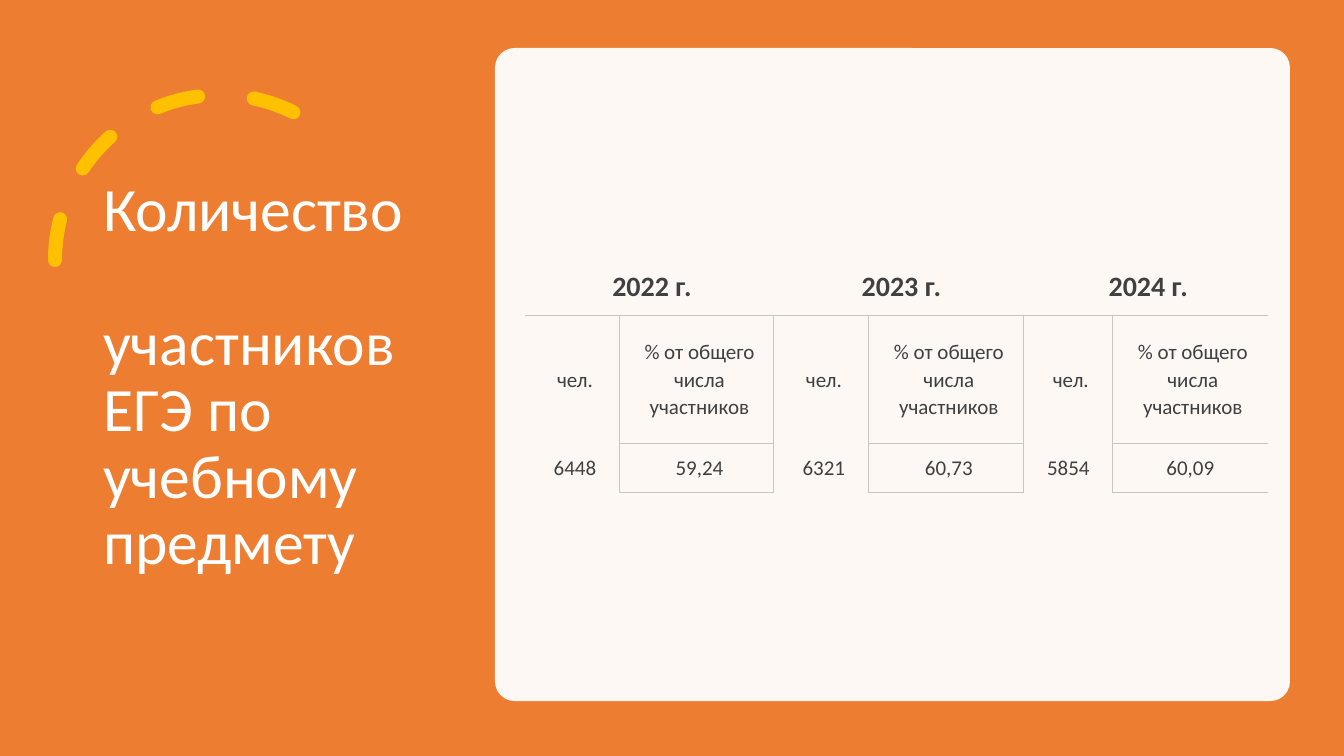
from dataclasses import dataclass

import pptx
import pptx.dml.color
import pptx.enum.dml
import pptx.enum.shapes
import pptx.enum.text
import pptx.oxml.ns
import pptx.util
from lxml import etree


@dataclass(frozen=True)
class Theme:
    orange: str = "ED7D31"
    yellow: str = "FFC000"
    white: str = "FFFFFF"
    ink: str = "404040"
    rule: str = "C7C6C1"
    font: str = "Calibri"
    title: int = 44
    year: int = 20
    body: int = 15


theme = Theme()
px = 914400 / 100.8
qn = pptx.oxml.ns.qn
rgb = pptx.dml.color.RGBColor.from_string
SHAPE = pptx.enum.shapes.MSO_SHAPE
ALIGN = pptx.enum.text.PP_ALIGN
ANCHOR = pptx.enum.text.MSO_ANCHOR


def emu(*lengths):
    return [pptx.util.Emu(round(n * px)) for n in lengths]


def write(p, text, size, color, bold=False, align=ALIGN.LEFT, spacing=1.0):
    p.alignment = align
    p.line_spacing = spacing
    r = p.add_run()
    r.text = text
    r.font.name = theme.font
    r.font.size = pptx.util.Pt(size)
    r.font.bold = bold
    r.font.color.rgb = rgb(color)


prs = pptx.Presentation()
prs.slide_width, prs.slide_height = emu(1344, 756)
slide = prs.slides.add_slide(prs.slide_layouts[5])
shapes = slide.shapes

# Background, dashed arc and card
backdrop = shapes.add_shape(SHAPE.RECTANGLE, *emu(0, 0, 1344, 756))
arc = shapes.add_shape(SHAPE.ARC, *emu(55, 95, 330, 330))
card = shapes.add_shape(SHAPE.ROUNDED_RECTANGLE, *emu(495, 48, 795, 653))

for s, color in ((backdrop, theme.orange), (card, theme.white)):
    s.shadow.inherit = False
    s.fill.solid()
    s.fill.fore_color.rgb = rgb(color)
    s.line.fill.background()
card.adjustments[0] = 0.03
card_color = card._element.spPr.find(qn("a:solidFill"))[0]
etree.SubElement(card_color, qn("a:alpha"), val="95000")

arc.shadow.inherit = False
arc.fill.background()
arc.adjustments[0] = 146.13
arc.adjustments[1] = 0
arc.line.color.rgb = rgb(theme.yellow)
arc.line.width = pptx.util.Pt(10)
arc.line.dash_style = pptx.enum.dml.MSO_LINE.DASH
arc.line._ln.set("cap", "rnd")
arc._element.spPr.find(qn("a:xfrm")).set("flipH", "1")

# Title, stacked above the background
title = shapes.title
title.left, title.top, title.width, title.height = emu(93, 71, 326, 614)
card._element.addprevious(title._element)
tf = title.text_frame
tf.word_wrap = True
tf.auto_size = pptx.enum.text.MSO_AUTO_SIZE.NONE
tf.vertical_anchor = ANCHOR.MIDDLE
write(tf.paragraphs[0], "Количество", theme.title, theme.white, spacing=0.9)
p = tf.add_paragraph()
p.space_before = pptx.util.Pt(48)
write(p, "участников ЕГЭ по учебному предмету", theme.title, theme.white, spacing=0.9)

# Table: two columns for each year
results = [("2022 г.", "6448", "59,24"), ("2023 г.", "6321", "60,73"),
           ("2024 г.", "5854", "60,09")]
col_widths = [95, 154, 95, 155, 89, 155]
row_heights = [59, 128, 49]
rows = [[], [], []]
for year, count, share in results:
    rows[0] += [year, ""]
    rows[1] += ["чел.", "% от общего числа участников"]
    rows[2] += [count, share]

frame = shapes.add_table(3, 6, *emu(525, 256, sum(col_widths), sum(row_heights)))
table = frame.table
table.first_row = table.horz_banding = False
for column, width in zip(table.columns, emu(*col_widths)):
    column.width = width
for row, height in zip(table.rows, emu(*row_heights)):
    row.height = height
for c in (0, 2, 4):
    table.cell(0, c).merge(table.cell(0, c + 1))

for i, texts in enumerate(rows):
    for j, text in enumerate(texts):
        cell = table.cell(i, j)
        tight = i == 2 and j >= 4
        insets = emu(*((5, 0, 5, 0) if tight else (22, 11, 17, 11)))
        cell.margin_left, cell.margin_top, cell.margin_right, cell.margin_bottom = insets
        cell.vertical_anchor = ANCHOR.MIDDLE if i else ANCHOR.TOP
        if text:
            write(cell.text_frame.paragraphs[0], text,
                  theme.body if i else theme.year, theme.ink,
                  bold=i == 0, align=ALIGN.CENTER, spacing=1.07)
        share_column = j % 2 == 1
        edges = {"L": i > 0 and j > 0, "R": i > 0 and j < 5,
                 "T": i == 1 or (i == 2 and share_column),
                 "B": i == 0 or share_column}
        tcPr = cell._tc.get_or_add_tcPr()
        for side, visible in edges.items():
            ln = etree.SubElement(tcPr, qn(f"a:ln{side}"), w="9525")
            if visible:
                fill = etree.SubElement(ln, qn("a:solidFill"))
                etree.SubElement(fill, qn("a:srgbClr"), val=theme.rule)
            else:
                etree.SubElement(ln, qn("a:noFill"))
        cell.fill.background()

prs.save("out.pptx")
